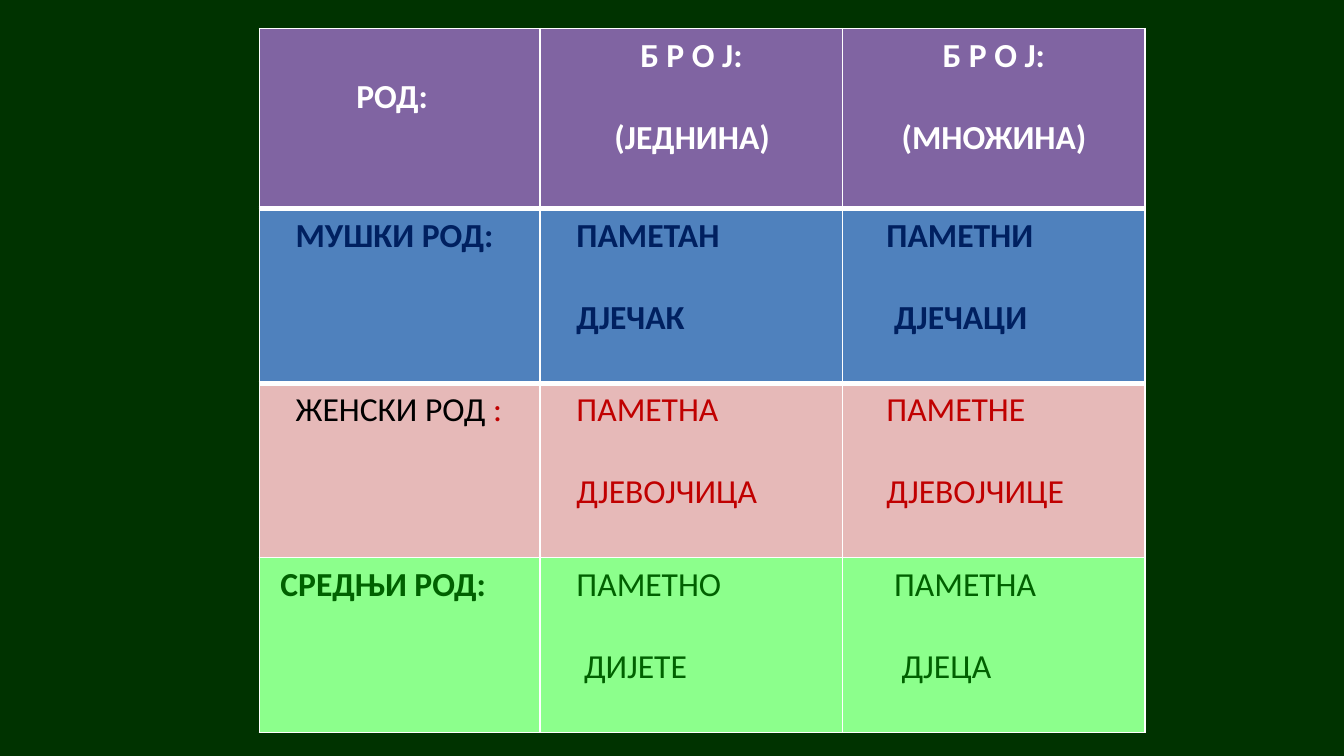
from dataclasses import dataclass

from lxml.etree import SubElement
from pptx import Presentation
from pptx.dml.color import RGBColor as Color
from pptx.enum.text import PP_ALIGN as Align
from pptx.oxml.ns import qn
from pptx.util import Inches, Pt


@dataclass(frozen=True)
class Theme:
    background: str = "003300"
    white: str = "FFFFFF"
    black: str = "000000"
    purple: str = "8064A2"
    blue: str = "4F81BD"
    navy: str = "002060"
    pink: str = "E6B9B8"
    red: str = "C00000"
    light_green: str = "8CFF8C"
    green: str = "006100"
    font: str = "Calibri"
    size: int = 18
    line: int = 22
    indent_step: float = 4.07
    thin: int = 1
    thick: int = 3


@dataclass
class Line:
    text: str
    indent: int = 0
    centered: bool = False
    tail: str = ""


@dataclass
class Entry:
    lines: list
    color: str
    bold: bool = False
    tail_color: str = ""
    skipped: int = 0


@dataclass
class Band:
    fill: str
    entries: list
    top: int = 1
    bottom: int = 1


class GenderSlide:
    def __init__(self, deck, theme):
        self.deck = deck
        self.theme = theme
        self.page = deck.slides.add_slide(deck.slide_layouts[6])
        fill = self.page.background.fill
        fill.solid()
        fill.fore_color.rgb = Color.from_string(theme.background)

    def across(self, percent):
        return round(self.deck.slide_width * percent / 100)

    def down(self, percent):
        return round(self.deck.slide_height * percent / 100)

    def table(self, left, top, columns, row_height, bands):
        frame = self.page.shapes.add_table(
            len(bands), len(columns), self.across(left), self.down(top),
            self.across(sum(columns)), self.down(row_height * len(bands)))
        table = frame.table
        table.first_row = table.horz_banding = False
        for column, percent in zip(table.columns, columns):
            column.width = self.across(percent)
        for row, band in zip(table.rows, bands):
            row.height = self.down(row_height)
            for cell, entry in zip(row.cells, band.entries):
                self.borders(cell, band)
                cell.fill.solid()
                cell.fill.fore_color.rgb = Color.from_string(band.fill)
                self.text(cell, entry)

    def borders(self, cell, band):
        thin = self.theme.thin
        widths = {"a:lnL": thin, "a:lnR": thin, "a:lnT": band.top, "a:lnB": band.bottom}
        properties = cell._tc.get_or_add_tcPr()
        for tag, width in widths.items():
            line = SubElement(properties, qn(tag), w=str(Pt(width)))
            SubElement(SubElement(line, qn("a:solidFill")), qn("a:srgbClr"), val=self.theme.white)

    def text(self, cell, entry):
        theme = self.theme
        cell.margin_top = Inches(0.05) + Pt(theme.line * entry.skipped)
        frame = cell.text_frame
        for number, line in enumerate(entry.lines):
            para = frame.add_paragraph() if number else frame.paragraphs[0]
            para.alignment = Align.CENTER if line.centered else Align.LEFT
            para.space_before = Pt(theme.line if number else 0)
            properties = para._p.get_or_add_pPr()
            properties.set("marL", str(Pt(line.indent * theme.indent_step)))
            properties.set("indent", "0")
            para.font.name = theme.font
            para.font.size = Pt(theme.size)
            para.font.bold = entry.bold
            para.font.color.rgb = Color.from_string(entry.color)
            para.add_run().text = line.text
            if line.tail:
                span = para.add_run()
                span.text = line.tail
                span.font.color.rgb = Color.from_string(entry.tail_color)


def main():
    theme = Theme()
    deck = Presentation()
    deck.slide_width = Inches(10)
    deck.slide_height = deck.slide_width * 9 // 16
    slide = GenderSlide(deck, theme)

    left = 19.3
    columns = (20.9, 22.5, 22.5)
    number_title = Line("Б Р О Ј:", centered=True)

    masculine = Band(theme.blue, [
        Entry([Line("МУШКИ РОД:", 3)], theme.navy, True),
        Entry([Line("ПАМЕТАН", 3), Line("ДЈЕЧАК", 3)], theme.navy, True),
        Entry([Line("ПАМЕТНИ", 4), Line("ДЈЕЧАЦИ", 5)], theme.navy, True),
    ], bottom=theme.thick)
    feminine = Band(theme.pink, [
        Entry([Line("ЖЕНСКИ РОД ", 3, tail=":")], theme.black, tail_color=theme.red),
        Entry([Line("ПАМЕТНА", 3), Line("ДЈЕВОЈЧИЦА", 3)], theme.red),
        Entry([Line("ПАМЕТНЕ", 4), Line("ДЈЕВОЈЧИЦЕ", 4)], theme.red),
    ], top=theme.thick)
    neuter = Band(theme.light_green, [
        Entry([Line("СРЕДЊИ РОД:", 1)], theme.green, True),
        Entry([Line("ПАМЕТНО", 3), Line("ДИЈЕТЕ", 4)], theme.green),
        Entry([Line("ПАМЕТНА", 5), Line("ДЈЕЦА", 6)], theme.green),
    ])
    heading = Band(theme.purple, [
        Entry([Line("РОД:", 11)], theme.white, True, skipped=1),
        Entry([number_title, Line("(ЈЕДНИНА)", 8)], theme.white, True),
        Entry([number_title, Line("(МНОЖИНА)", 6)], theme.white, True),
    ], bottom=theme.thick)

    slide.table(left, 27.56, columns, 23.11, [masculine, feminine, neuter])
    slide.table(left, 3.78, columns, 23.82, [heading])
    deck.save("out.pptx")


if __name__ == "__main__":
    main()
